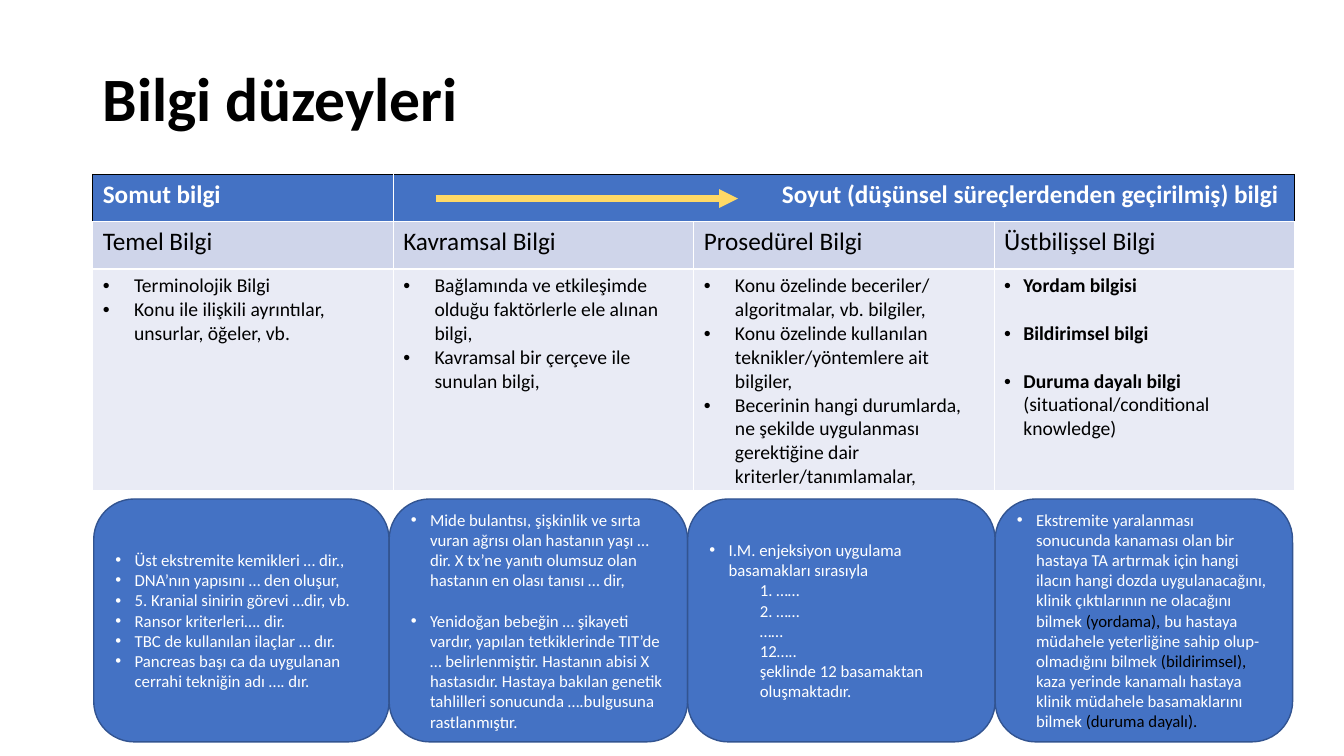
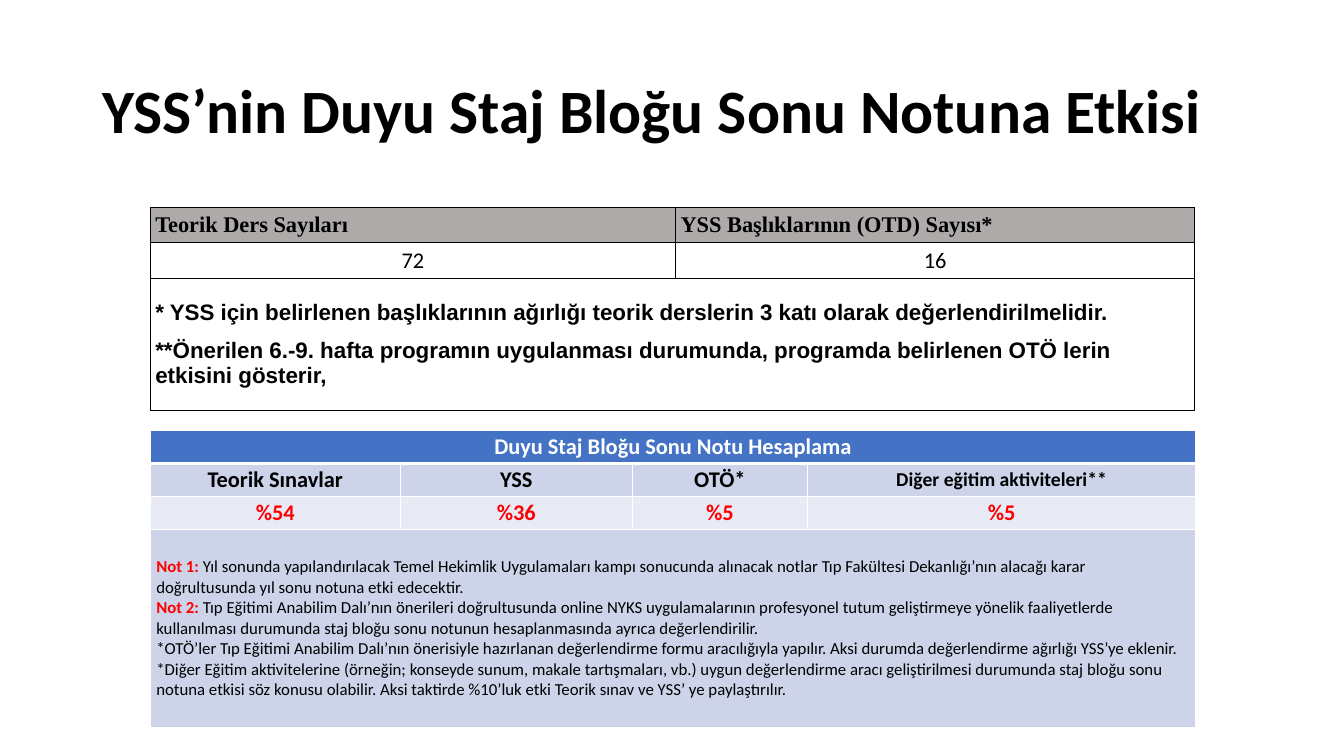
import itertools

import lxml.etree
import pptx
import pptx.dml.color
import pptx.enum.shapes
import pptx.enum.text
import pptx.oxml.ns
import pptx.util

Inches, Pt = pptx.util.Inches, pptx.util.Pt
ALIGN, ANCHOR = pptx.enum.text.PP_ALIGN, pptx.enum.text.MSO_ANCHOR
SHAPE = pptx.enum.shapes.MSO_SHAPE
qn = pptx.oxml.ns.qn

COLORS = {
    "black": "000000", "white": "FFFFFF", "blue": "4472C4", "outline": "325491",
    "arrow": "FFD966", "red": "FF0000", "gray": "AEAAAA",
    "head": "CFD5EA", "body": "E9EBF5", "band": "CDD4EA", "pale": "E8EBF5",
}
BLACK, RED = {"color": "black"}, {"color": "red", "bold": True}

LEVELS = ["Temel Bilgi", "Kavramsal Bilgi", "Prosedürel Bilgi", "Üstbilişsel Bilgi"]
DETAILS = [
    ["Terminolojik Bilgi", "Konu ile ilişkili ayrıntılar, unsurlar, öğeler, vb."],
    ["Bağlamında ve etkileşimde olduğu faktörlerle ele alınan bilgi,",
     "Kavramsal bir çerçeve ile sunulan bilgi,"],
    ["Konu özelinde beceriler/ algoritmalar, vb. bilgiler,",
     "Konu özelinde kullanılan teknikler/yöntemlere ait bilgiler,",
     "Becerinin hangi durumlarda, ne şekilde uygulanması gerektiğine dair "
     "kriterler/tanımlamalar,"],
    [[("Yordam bilgisi", {"bold": True})],
     [("Bildirimsel bilgi", {"bold": True})],
     [("Duruma dayalı bilgi ", {"bold": True}), "(situational/conditional knowledge)"]],
]
EXAMPLES = [
    ["Üst ekstremite kemikleri … dir.,",
     "DNA’nın yapısını … den oluşur,",
     "5. Kranial sinirin görevi …dir, vb.",
     "Ransor kriterleri…. dir.",
     "TBC de kullanılan ilaçlar … dır.",
     "Pancreas başı ca da uygulanan cerrahi tekniğin adı …. dır."],
    ["Mide bulantısı, şişkinlik ve sırta vuran ağrısı olan hastanın yaşı … dir. "
     "X tx’ne yanıtı olumsuz olan hastanın en olası tanısı … dir,",
     "Yenidoğan bebeğin … şikayeti vardır, yapılan tetkiklerinde TIT’de … "
     "belirlenmiştir. Hastanın abisi X hastasıdır. Hastaya bakılan genetik "
     "tahlilleri sonucunda ….bulgusuna rastlanmıştır."],
    ["I.M. enjeksiyon uygulama basamakları sırasıyla"],
    [["Ekstremite yaralanması sonucunda kanaması olan bir hastaya TA artırmak için "
      "hangi ilacın hangi dozda uygulanacağını, klinik çıktılarının ne olacağını bilmek ",
      ("(yordama), ", BLACK),
      "bu hastaya müdahele yeterliğine sahip olup-olmadığını bilmek ",
      ("(bildirimsel), ", BLACK),
      "kaza yerinde kanamalı hastaya klinik müdahele basamaklarını bilmek ",
      ("(duruma dayalı).", BLACK)]],
]
STEPS = ["1. ……", "2. ……", "……", "12…..", "şeklinde 12 basamaktan oluşmaktadır."]
WEIGHT_NOTES = [
    "* YSS için belirlenen başlıklarının ağırlığı teorik derslerin 3 katı olarak "
    "değerlendirilmelidir.",
    "**Önerilen 6.-9. hafta programın uygulanması durumunda, programda belirlenen "
    "OTÖ lerin etkisini gösterir,",
]
GRADES = [("Teorik Sınavlar", "%54"), ("YSS", "%36"), ("OTÖ*", "%5"),
          ("Diğer eğitim aktiviteleri**", "%5")]
GRADE_NOTES = [
    [("Not 1: ", RED),
     "Yıl sonunda yapılandırılacak Temel Hekimlik Uygulamaları kampı sonucunda alınacak "
     "notlar Tıp Fakültesi Dekanlığı’nın alacağı karar doğrultusunda yıl sonu notuna "
     "etki edecektir."],
    [("Not 2: ", RED),
     "Tıp Eğitimi Anabilim Dalı’nın önerileri doğrultusunda online NYKS uygulamalarının "
     "profesyonel tutum geliştirmeye yönelik faaliyetlerde kullanılması durumunda staj "
     "bloğu sonu notunun hesaplanmasında ayrıca değerlendirilir."],
    "*OTÖ’ler Tıp Eğitimi Anabilim Dalı’nın önerisiyle hazırlanan değerlendirme formu "
    "aracılığıyla yapılır. Aksi durumda değerlendirme ağırlığı YSS’ye eklenir.",
    "*Diğer Eğitim aktivitelerine (örneğin; konseyde sunum, makale tartışmaları, vb.) "
    "uygun değerlendirme aracı geliştirilmesi durumunda staj bloğu sonu notuna etkisi "
    "söz konusu olabilir. Aksi taktirde %10’luk etki Teorik sınav ve YSS’ ye "
    "paylaştırılır.",
]


def rgb(name):
    """Return the named colour."""
    return pptx.dml.color.RGBColor.from_string(COLORS[name])


def write(tf, paras, size, color="black", bold=False, font="Calibri",
          align=ALIGN.LEFT, gap=0, indent=0, bullet=False):
    """Append paragraphs, each a string or a list of strings and (text, style) runs."""
    for i, runs in enumerate(paras):
        p = tf.add_paragraph() if tf.text else tf.paragraphs[0]
        p.alignment = align
        p.space_before = Pt(gap if i else 0)
        pPr = p._p.get_or_add_pPr()
        pPr.set("marL", str(Inches(indent)))
        pPr.set("indent", str(-Inches(indent) if bullet else 0))
        if bullet:
            lxml.etree.SubElement(pPr, qn("a:buFont")).set("typeface", "Arial")
            lxml.etree.SubElement(pPr, qn("a:buChar")).set("char", "•")
        for run in [runs] if isinstance(runs, str) else runs:
            text, style = (run, {}) if isinstance(run, str) else run
            r = p.add_run()
            r.text = text
            r.font.name, r.font.size = font, Pt(size)
            r.font.bold = style.get("bold", bold)
            r.font.color.rgb = rgb(style.get("color", color))


def add_title(s, top, text):
    """Place the bold slide title."""
    tf = s.shapes.add_textbox(Inches(0.92), Inches(top), Inches(11.5), Inches(1.45)).text_frame
    tf.word_wrap = True
    tf.vertical_anchor = ANCHOR.MIDDLE
    write(tf, [text], 44, bold=True)
    tf.paragraphs[0].line_spacing = 0.9


def add_grid(s, left, top, widths, heights):
    """Add an unstyled table with the given column widths and row heights."""
    frame = s.shapes.add_table(len(heights), len(widths), Inches(left), Inches(top),
                               Inches(sum(widths)), Inches(sum(heights)))
    table = frame.table
    table.first_row = table.horz_banding = False
    for column, width in zip(table.columns, widths):
        column.width = Inches(width)
    for row, height in zip(table.rows, heights):
        row.height = Inches(height)
    return table


def set_borders(cell, color, **widths):
    """Draw the cell borders whose widths are given by side: L, R, T, B."""
    tcPr = cell._tc.get_or_add_tcPr()
    for i, side in enumerate(side for side in "LRTB" if side in widths):
        ln = lxml.etree.Element(qn("a:ln" + side), w=str(Pt(widths[side])))
        fill = lxml.etree.SubElement(ln, qn("a:solidFill"))
        lxml.etree.SubElement(fill, qn("a:srgbClr")).set("val", COLORS[color])
        tcPr.insert(i, ln)


def fill_cell(cell, paras, fill, size, inset=None, **style):
    """Fill a cell and write its text; an inset also centres it vertically."""
    cell.fill.solid()
    cell.fill.fore_color.rgb = rgb(fill)
    if inset is not None:
        cell.vertical_anchor = ANCHOR.MIDDLE
        cell.margin_left = cell.margin_right = Inches(inset)
        cell.margin_top = cell.margin_bottom = Inches(0.03)
    write(cell.text_frame, paras, size, **style)


def add_levels_table(s, left, top):
    """Place the table that runs from concrete to abstract knowledge."""
    table = add_grid(s, left, top, [2.98] * 4, [0.47, 0.47, 1.98])
    table.cell(0, 1).merge(table.cell(0, 3))
    header = {"fill": "blue", "size": 18, "color": "white", "bold": True}
    fill_cell(table.cell(0, 0), ["Somut bilgi"], **header)
    fill_cell(table.cell(0, 1), ["Soyut (düşünsel süreçlerdenden geçirilmiş) bilgi "],
              align=ALIGN.RIGHT, **header)
    set_borders(table.cell(0, 0), "black", L=1, T=1, B=1)
    for col in range(1, 4):
        set_borders(table.cell(0, col), "black", R=1, T=1, B=1)
    for col, (level, details) in enumerate(zip(LEVELS, DETAILS)):
        last = col == len(LEVELS) - 1
        fill_cell(table.cell(1, col), [level], "head", 18)
        fill_cell(table.cell(2, col), details, "body", 14, bullet=True,
                  indent=0.19 if last else 0.31, gap=17 if last else 0)
        set_borders(table.cell(1, col), "white", L=1, R=1, B=1)
        set_borders(table.cell(2, col), "white", L=1, R=1, T=1, B=1)


def add_arrow(s, left, y, width):
    """Draw the horizontal arrow over the table header."""
    arrow = s.shapes.add_connector(pptx.enum.shapes.MSO_CONNECTOR.STRAIGHT, Inches(left),
                                   Inches(y), Inches(left + width), Inches(y))
    arrow.line.color.rgb = rgb("arrow")
    arrow.line.width = Pt(4.5)
    spPr = arrow._element.spPr
    lxml.etree.SubElement(spPr.find(qn("a:ln")), qn("a:tailEnd")).set("type", "triangle")
    lxml.etree.SubElement(spPr, qn("a:effectLst"))


def add_card(s, left, top, width, height, paras):
    """Place a rounded card with bulleted examples and return its text frame."""
    card = s.shapes.add_shape(SHAPE.ROUNDED_RECTANGLE, Inches(left), Inches(top),
                              Inches(width), Inches(height))
    card.shadow.inherit = False
    card.fill.solid()
    card.fill.fore_color.rgb = rgb("blue")
    card.line.color.rgb = rgb("outline")
    card.line.width = Pt(1)
    tf = card.text_frame
    tf.word_wrap = True
    tf.vertical_anchor = ANCHOR.MIDDLE
    write(tf, paras, 12, "white", gap=14.6 if len(paras) == 2 else 0,
          indent=0.19, bullet=True)
    return tf


def add_counts_table(s, left, top):
    """Place the table of lecture and topic counts."""
    table = add_grid(s, left, top, [5.21, 5.15], [0.35, 0.35, 1.31])
    table.cell(2, 0).merge(table.cell(2, 1))
    counts = [("Teorik Ders Sayıları", "72"), ("YSS Başlıklarının (OTD) Sayısı*", "16")]
    for col, (label, count) in enumerate(counts):
        fill_cell(table.cell(0, col), [label], "gray", 16, 0.05, bold=True,
                  font="Times New Roman")
        fill_cell(table.cell(1, col), [count], "white", 16, 0.05, align=ALIGN.CENTER)
    fill_cell(table.cell(2, 0), WEIGHT_NOTES, "white", 16, 0.05, bold=True,
              font="Arial", gap=10)
    for cell in table.iter_cells():
        set_borders(cell, "black", L=0.67, R=0.67, T=0.67, B=0.67)


def add_grades_table(s, left, top):
    """Place the table of grade shares with its notes."""
    table = add_grid(s, left, top, [2.48, 2.3, 1.74, 3.85], [0.31, 0.31, 0.31, 1.97])
    for row in (0, 3):
        table.cell(row, 0).merge(table.cell(row, 3))
    bold = {"inset": 0.06, "bold": True, "align": ALIGN.CENTER}
    fill_cell(table.cell(0, 0), ["Duyu Staj Bloğu Sonu Notu Hesaplama"], "blue", 16,
              color="white", **bold)
    for col, (label, share) in enumerate(GRADES):
        fill_cell(table.cell(1, col), [label], "band", 14 if col == 3 else 16, **bold)
        fill_cell(table.cell(2, col), [share], "pale", 16, color="red", **bold)
    fill_cell(table.cell(3, 0), GRADE_NOTES, "band", 12, 0.06)
    for row, col in itertools.product(range(4), range(4)):
        set_borders(table.cell(row, col), "white", L=0.67, R=0.67,
                    T=2 if row == 1 else 0.67, B=2 if row == 0 else 0.67)


def add_levels_slide(s):
    """Build the slide on levels of knowledge."""
    add_title(s, 0.28, "Bilgi düzeyleri")
    add_levels_table(s, 0.92, 1.73)
    add_arrow(s, 4.32, 1.97, 3)
    edges = [0.93, 3.86, 6.82, 9.87, 12.82]
    frames = [add_card(s, left, 4.95, right - left, 2.41, paras)
              for (left, right), paras in zip(itertools.pairwise(edges), EXAMPLES)]
    write(frames[2], STEPS, 12, "white", indent=0.5)


def add_grades_slide(s):
    """Build the slide on the grade calculation."""
    add_title(s, 0.4, "YSS’nin Duyu Staj Bloğu Sonu Notuna Etkisi")
    add_counts_table(s, 1.49, 2.06)
    add_grades_table(s, 1.49, 4.27)


def main():
    """Build and save the presentation."""
    prs = pptx.Presentation()
    prs.slide_width, prs.slide_height = Inches(13.33), Inches(7.5)
    for build in (add_levels_slide, add_grades_slide):
        build(prs.slides.add_slide(prs.slide_layouts[6]))
    prs.save("out.pptx")


if __name__ == "__main__":
    main()
